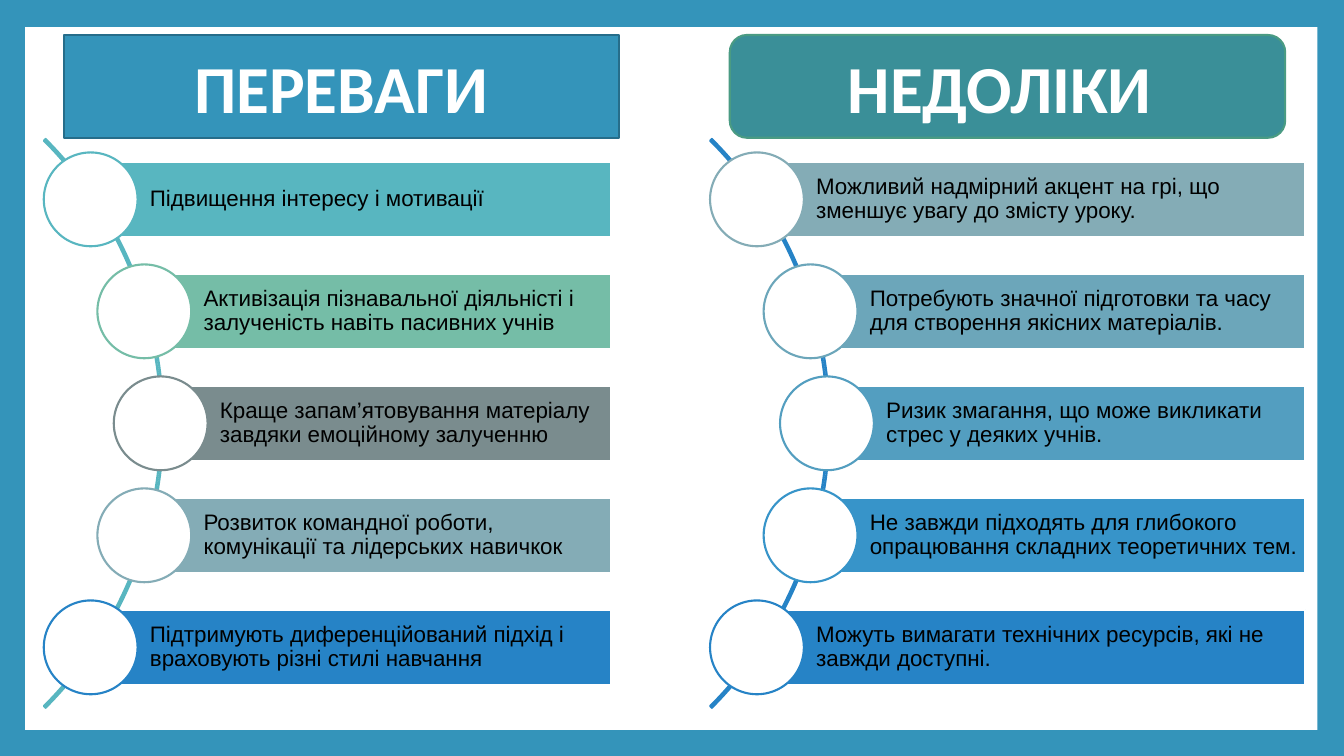
from dataclasses import dataclass

import lxml.etree
import pptx
import pptx.dml.color
import pptx.enum.shapes
import pptx.enum.text
import pptx.oxml.ns
import pptx.util

Pt = pptx.util.Pt
Shapes = pptx.enum.shapes.MSO_SHAPE
Anchor = pptx.enum.text.MSO_ANCHOR
Align = pptx.enum.text.PP_ALIGN

ROW_STEP = 80
MIDDLE_Y = 302.4
ROW_INDENTS = (0, 38.3, 50, 38.3, 0)
BAR_HEIGHT = 53.3
CIRCLE_SIZE = 67
ARC_SIZE = 574.6
ARC_TO_BARS = 522.7
LINE_WIDTH = 1.5

BAR_FRAME = dict(margin_left=Pt(42.3), margin_right=Pt(2.9), margin_top=Pt(2.9),
                 margin_bottom=Pt(2.9))
BAR_PARAGRAPH = dict(alignment=Align.LEFT, line_spacing=0.9)
BAR_FONT = dict(name="Arial", size=Pt(16), bold=False)
HEADING_FRAME = dict(margin_left=Pt(7.2), margin_right=Pt(7.2), margin_top=Pt(3.6),
                     margin_bottom=Pt(3.6))
HEADING_PARAGRAPH = dict(alignment=Align.CENTER, line_spacing=1.0, space_before=Pt(0))
HEADING_FONT = dict(name="Calibri", size=Pt(48), bold=True)


@dataclass
class Row:
    text: str
    color: str


@dataclass
class Column:
    heading: str
    heading_left: float
    heading_fill: str
    heading_line: str
    placeholder: int
    left: float
    right: float
    arc_color: str
    rows: list[Row]


COLUMNS = [
    Column("ПЕРЕВАГИ", 45.4, "3494BA", "266D8A", 0, 64.8, 436.3, "58B6C0", [
        Row("Підвищення інтересу і мотивації", "58B6C0"),
        Row("Активізація пізнавальної діяльністі і залученість навіть пасивних учнів",
            "75BDA7"),
        Row("Краще запам’ятовування матеріалу завдяки емоційному залученню", "7A8C8E"),
        Row("Розвиток командної роботи, комунікації та лідерських навичкок", "84ACB6"),
        Row("Підтримують диференційований підхід і враховують різні стилі навчання",
            "2683C6"),
    ]),
    Column("НЕДОЛІКИ ", 521.3, "3A8F98", "4A9B83", 1, 540.7, 932.4, "2683C6", [
        Row("Можливий надмірний акцент на грі, що зменшує увагу до змісту уроку.", "84ACB6"),
        Row("Потребують значної підготовки та часу для створення якісних матеріалів.",
            "6CA6BA"),
        Row("Ризик змагання, що може викликати стрес у деяких учнів.", "539EC0"),
        Row("Не завжди підходять для глибокого опрацювання складних теоретичних тем.",
            "3794C9"),
        Row("Можуть вимагати технічних ресурсів, які не завжди доступні.", "2683C6"),
    ]),
]


def color_of(value: str) -> pptx.dml.color.RGBColor:
    return pptx.dml.color.RGBColor.from_string(value)


def apply(target: object, values: dict) -> None:
    for name, value in values.items():
        setattr(target, name, value)


def paint(shape, fill: str | None, line: str | None) -> None:
    if fill:
        shape.fill.solid()
        shape.fill.fore_color.rgb = color_of(fill)
    else:
        shape.fill.background()
    if line:
        shape.line.color.rgb = color_of(line)
        shape.line.width = Pt(LINE_WIDTH)
    else:
        shape.line.fill.background()


def add_shape(slide, kind, left: float, top: float, width: float, height: float,
              fill: str | None, line: str | None):
    shape = slide.shapes.add_shape(kind, Pt(left), Pt(top), Pt(width), Pt(height))
    shape.shadow.inherit = False
    paint(shape, fill, line)
    return shape


def write(shape, text: str, color: str, frame: dict, paragraph_format: dict,
          font: dict) -> None:
    text_frame = shape.text_frame
    apply(text_frame, dict(frame, word_wrap=True, vertical_anchor=Anchor.MIDDLE,
                           auto_size=pptx.enum.text.MSO_AUTO_SIZE.NONE))
    paragraph = text_frame.paragraphs[0]
    apply(paragraph, paragraph_format)
    run = paragraph.add_run()
    run.text = text
    apply(run.font, font)
    run.font.color.rgb = color_of(color)


def draw_heading(slide, column: Column) -> None:
    shape = slide.placeholders[column.placeholder]
    apply(shape, dict(left=Pt(column.heading_left), top=Pt(25), width=Pt(396.7),
                      height=Pt(73.4)))
    # Rounded outline for the placeholder
    qualified = pptx.oxml.ns.qn
    geometry = lxml.etree.SubElement(shape._element.spPr, qualified("a:prstGeom"),
                                     prst="roundRect")
    lxml.etree.SubElement(geometry, qualified("a:avLst"))
    paint(shape, column.heading_fill, column.heading_line)
    write(shape, column.heading, "FFFFFF", HEADING_FRAME, HEADING_PARAGRAPH, HEADING_FONT)


def draw_list(slide, column: Column) -> None:
    # Arc running from 315 to 45 degrees
    arc = add_shape(slide, Shapes.BLOCK_ARC, column.left - ARC_TO_BARS,
                    MIDDLE_Y - ARC_SIZE / 2, ARC_SIZE, ARC_SIZE, None, column.arc_color)
    for index, value in enumerate((189, 27, 0.003)):
        arc.adjustments[index] = value

    # Bars, each with a circle centred on its left edge
    for index, (row, indent) in enumerate(zip(column.rows, ROW_INDENTS)):
        left = column.left + indent
        center = MIDDLE_Y + (index - 2) * ROW_STEP
        bar = add_shape(slide, Shapes.RECTANGLE, left, center - BAR_HEIGHT / 2,
                        column.right - left, BAR_HEIGHT, row.color, "FFFFFF")
        write(bar, row.text, "000000", BAR_FRAME, BAR_PARAGRAPH, BAR_FONT)
        add_shape(slide, Shapes.OVAL, left - CIRCLE_SIZE / 2, center - CIRCLE_SIZE / 2,
                  CIRCLE_SIZE, CIRCLE_SIZE, "FFFFFF", row.color)


def main() -> None:
    presentation = pptx.Presentation()
    apply(presentation, dict(slide_width=Pt(960), slide_height=Pt(540)))
    slide = presentation.slides.add_slide(presentation.slide_layouts[4])

    # Blue frame around a white panel, placed behind the headings
    slide.background.fill.solid()
    slide.background.fill.fore_color.rgb = color_of("3494BA")
    panel = add_shape(slide, Shapes.RECTANGLE, 18, 19.4, 923, 502, "FFFFFF", None)
    slide.shapes._spTree.insert(2, panel._element)

    # Two columns
    for column in COLUMNS:
        draw_heading(slide, column)
        draw_list(slide, column)

    # Unused placeholders
    for placeholder in list(slide.placeholders):
        if not placeholder.text_frame.text:
            placeholder._element.getparent().remove(placeholder._element)

    presentation.save("out.pptx")


if __name__ == "__main__":
    main()
